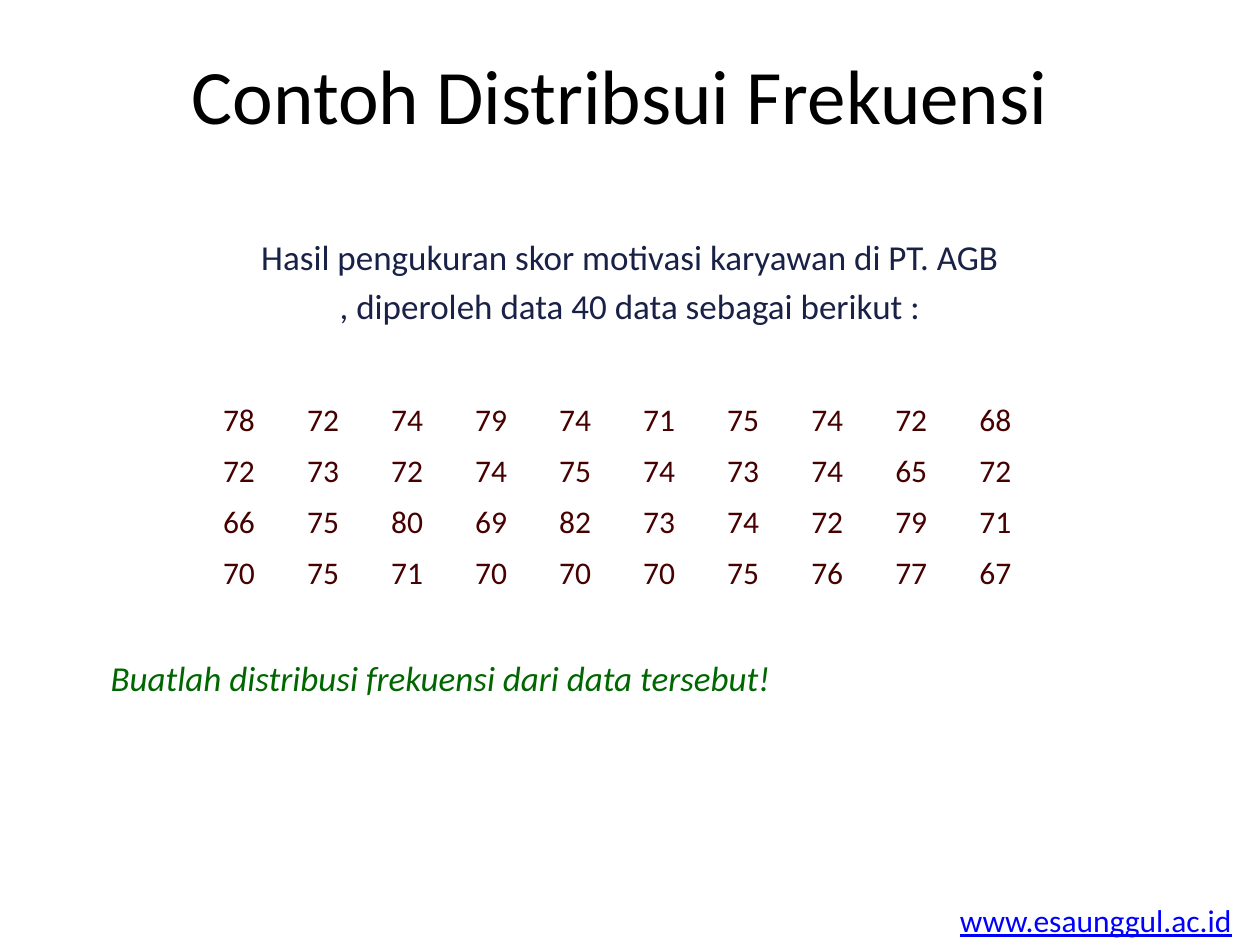
from pptx import Presentation
from pptx.dml.color import RGBColor
from pptx.enum.text import MSO_ANCHOR, PP_ALIGN
from pptx.util import Inches, Pt

FONT = "Calibri"
BLACK = RGBColor(0x00, 0x00, 0x00)
NAVY = RGBColor(0x1A, 0x21, 0x46)
MAROON = RGBColor(0x46, 0x00, 0x00)
GREEN = RGBColor(0x00, 0x66, 0x00)
LINK_BLUE = RGBColor(0x00, 0x00, 0xFF)

TITLE = "Contoh Distribsui Frekuensi"
INTRO = [
    "Hasil pengukuran skor motivasi karyawan di PT. AGB",
    ", diperoleh data 40 data sebagai berikut :",
]
SCORES = [
    [78, 72, 74, 79, 74, 71, 75, 74, 72, 68],
    [72, 73, 72, 74, 75, 74, 73, 74, 65, 72],
    [66, 75, 80, 69, 82, 73, 74, 72, 79, 71],
    [70, 75, 71, 70, 70, 70, 75, 76, 77, 67],
]
TASK = "Buatlah distribusi frekuensi dari data tersebut!"
WEBSITE = "www.esaunggul.ac.id"

TABLE_BOX = [Inches(n) for n in (1.67, 3.14, 6.67, 1.62)]


def write(frame, lines, size, color, align=PP_ALIGN.LEFT, italic=False, underline=False):
    """Fill a text frame with one uniformly formatted paragraph per line."""
    frame.text = "\n".join(lines)
    for index, paragraph in enumerate(frame.paragraphs):
        paragraph.alignment = align
        if index:
            paragraph.space_before = Pt(size * 0.2)
        font = paragraph.font
        font.name, font.size, font.color.rgb = FONT, Pt(size), color
        font.italic, font.underline = italic, underline


def add_text(slide, box, lines, size, color, wrap=True, **style):
    text_box = slide.shapes.add_textbox(*(Inches(n) for n in box))
    text_box.text_frame.word_wrap = wrap
    write(text_box.text_frame, lines, size, color, **style)


def add_scores(slide):
    shape = slide.shapes.add_table(len(SCORES), len(SCORES[0]), *TABLE_BOX)
    table = shape.table
    table.first_row = table.horz_banding = False
    for row, values in enumerate(SCORES):
        for column, value in enumerate(values):
            cell = table.cell(row, column)
            cell.fill.background()
            write(cell.text_frame, [str(value)], 18, MAROON)
    # The plain "No Style, No Grid" table style has no borders
    style_id = shape._element.graphic.graphicData.tbl.tblPr[0]
    style_id.text = "{2D5ABB26-0587-4C30-8999-92F81FD0307C}"


def main():
    presentation = Presentation()
    presentation.slide_width, presentation.slide_height = Inches(10), Inches(7.5)
    slide = presentation.slides.add_slide(presentation.slide_layouts[5])

    title = slide.shapes.title
    title.left, title.top = Inches(0.67), Inches(0.33)
    title.width, title.height = Inches(8.5), Inches(1.25)
    title.text_frame.vertical_anchor = MSO_ANCHOR.TOP
    write(title.text_frame, [TITLE], 44, BLACK, PP_ALIGN.CENTER)

    add_text(slide, (0.5, 1.82, 9, 0.92), INTRO, 20, NAVY, align=PP_ALIGN.CENTER)
    add_scores(slide)
    add_text(slide, (0.78, 5.16, 7.5, 0.74), [TASK], 20, GREEN, italic=True)
    add_text(slide, (7.52, 7.1, 2.38, 0.4), [WEBSITE], 18, LINK_BLUE,
             wrap=False, underline=True)

    presentation.save("out.pptx")


if __name__ == "__main__":
    main()
